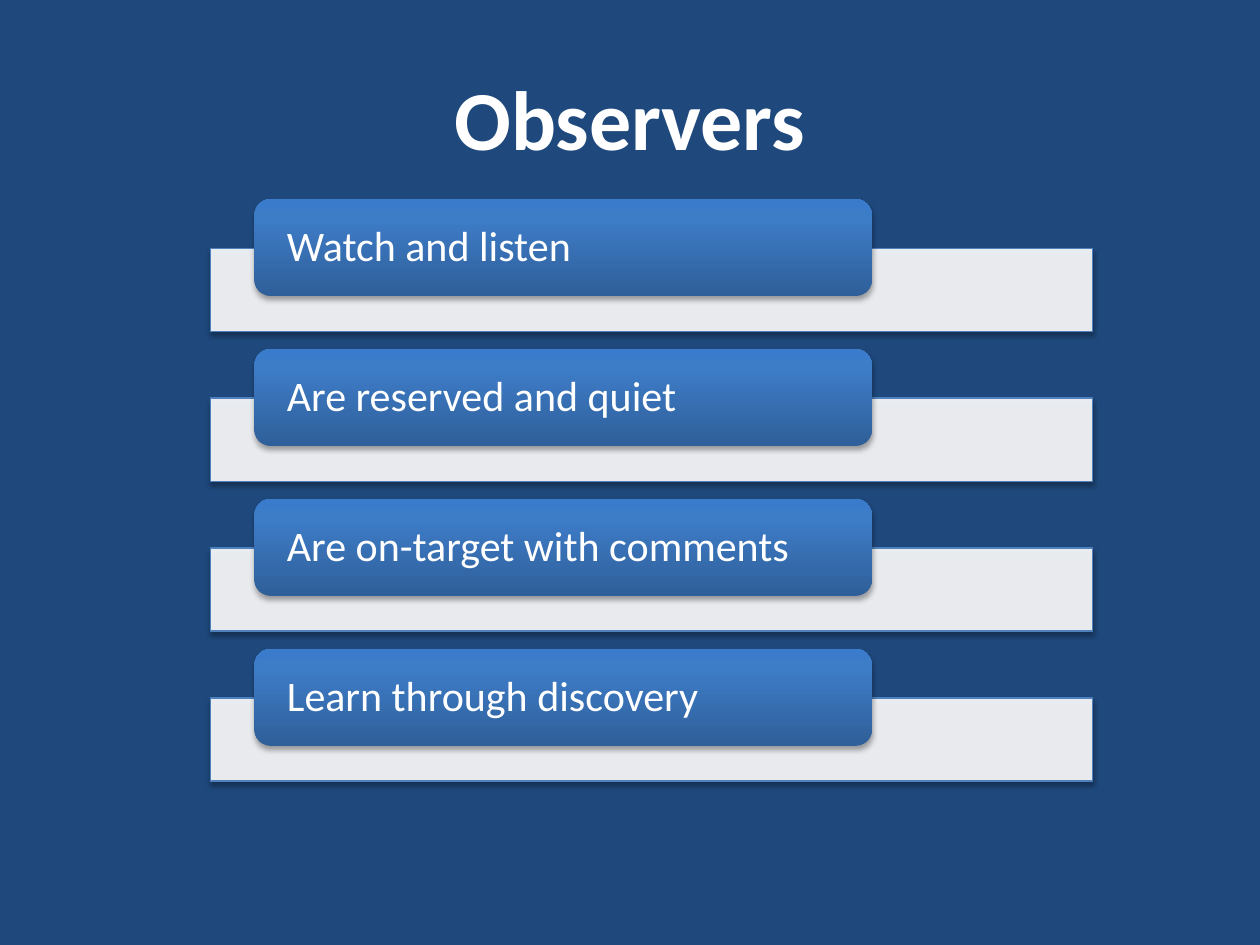
from dataclasses import dataclass

from lxml import etree
from pptx import Presentation
from pptx import util as u
from pptx.dml.color import RGBColor
from pptx.enum import shapes, text
from pptx.oxml import parse_xml
from pptx.oxml.ns import nsdecls, qn

FONT = "Calibri"
WHITE, NAVY, BLUE = "FFFFFF", "1F497D", "4F81BD"
GRADIENT = ((0, "2F5F99"), (80, "3D7CC7"), (100, "3A7CCB"))
FIRST_TOP, ROW_PITCH = 1.58, 1.19


@dataclass
class Box:
    left: float
    top: float
    width: float
    height: float

    def inches(self, down=0.0):
        return [u.Inches(n) for n in
                (self.left, self.top + down, self.width, self.height)]


# Places within a row, measured from the row's top
BAR = Box(1.67, 0.39, 7, 0.66)
LABEL = Box(2.02, 0, 4.9, 0.77)
TITLE = Box(0.5, 0.3, 9, 1.25)
TRAITS = (
    "Watch and listen",
    "Are reserved and quiet",
    "Are on-target with comments",
    "Learn through discovery",
)


def colour(value: str) -> RGBColor:
    return RGBColor.from_string(value)


def write(frame, words: str, size: float, bold: bool, align) -> None:
    frame.text = words
    frame.word_wrap = True
    frame.vertical_anchor = text.MSO_ANCHOR.MIDDLE
    paragraph = frame.paragraphs[0]
    paragraph.alignment = align
    font = paragraph.runs[0].font
    font.name, font.size, font.bold = FONT, u.Pt(size), bold
    font.color.rgb = colour(WHITE)


def add_soft_shadow(shape) -> None:
    shape.shadow.inherit = False
    effects = shape._element.spPr.find(qn("a:effectLst"))
    effects.append(parse_xml(
        f'<a:outerShdw {nsdecls("a")} blurRad="{u.Pt(3.1)}" dist="{u.Pt(1.8)}"'
        ' dir="5400000" rotWithShape="0"><a:srgbClr val="000000">'
        '<a:alpha val="35000"/></a:srgbClr></a:outerShdw>'))


def add_bar(slide, down: float) -> None:
    bar = slide.shapes.add_shape(shapes.MSO_SHAPE.RECTANGLE, *BAR.inches(down))
    bar.fill.solid()
    bar.fill.fore_color.rgb = colour(WHITE)
    fill = bar._element.spPr.find(qn("a:solidFill"))
    etree.SubElement(fill[0], qn("a:alpha"), val="90000")
    bar.line.color.rgb = colour(BLUE)
    bar.line.width = u.Pt(0.75)
    add_soft_shadow(bar)


def add_label(slide, words: str, down: float) -> None:
    label = slide.shapes.add_shape(
        shapes.MSO_SHAPE.ROUNDED_RECTANGLE, *LABEL.inches(down))
    label.line.fill.background()
    # Three-stop gradient, running from the bottom up
    stops = "".join(f'<a:gs pos="{share * 1000}"><a:srgbClr val="{value}"/></a:gs>'
                    for share, value in GRADIENT)
    label._element.spPr.find(qn("a:prstGeom")).addnext(parse_xml(
        f'<a:gradFill {nsdecls("a")} rotWithShape="1"><a:gsLst>{stops}</a:gsLst>'
        '<a:lin ang="16200000" scaled="0"/></a:gradFill>'))
    add_soft_shadow(label)
    frame = label.text_frame
    frame.margin_left = frame.margin_right = u.Inches(0.22)
    frame.margin_top = frame.margin_bottom = 0
    write(frame, words, 24, False, text.PP_ALIGN.LEFT)
    frame.paragraphs[0].line_spacing = 0.9


def main() -> None:
    deck = Presentation()
    deck.slide_width, deck.slide_height = u.Inches(10), u.Inches(7.5)
    slide = deck.slides.add_slide(deck.slide_layouts[5])
    slide.background.fill.solid()
    slide.background.fill.fore_color.rgb = colour(NAVY)

    # Title
    title = slide.shapes.title
    title.left, title.top, title.width, title.height = TITLE.inches()
    write(title.text_frame, "Observers", 48, True, text.PP_ALIGN.CENTER)

    # One bar and label for each trait
    for row, trait in enumerate(TRAITS):
        down = FIRST_TOP + row * ROW_PITCH
        add_bar(slide, down)
        add_label(slide, trait, down)

    deck.save("out.pptx")


if __name__ == "__main__":
    main()
